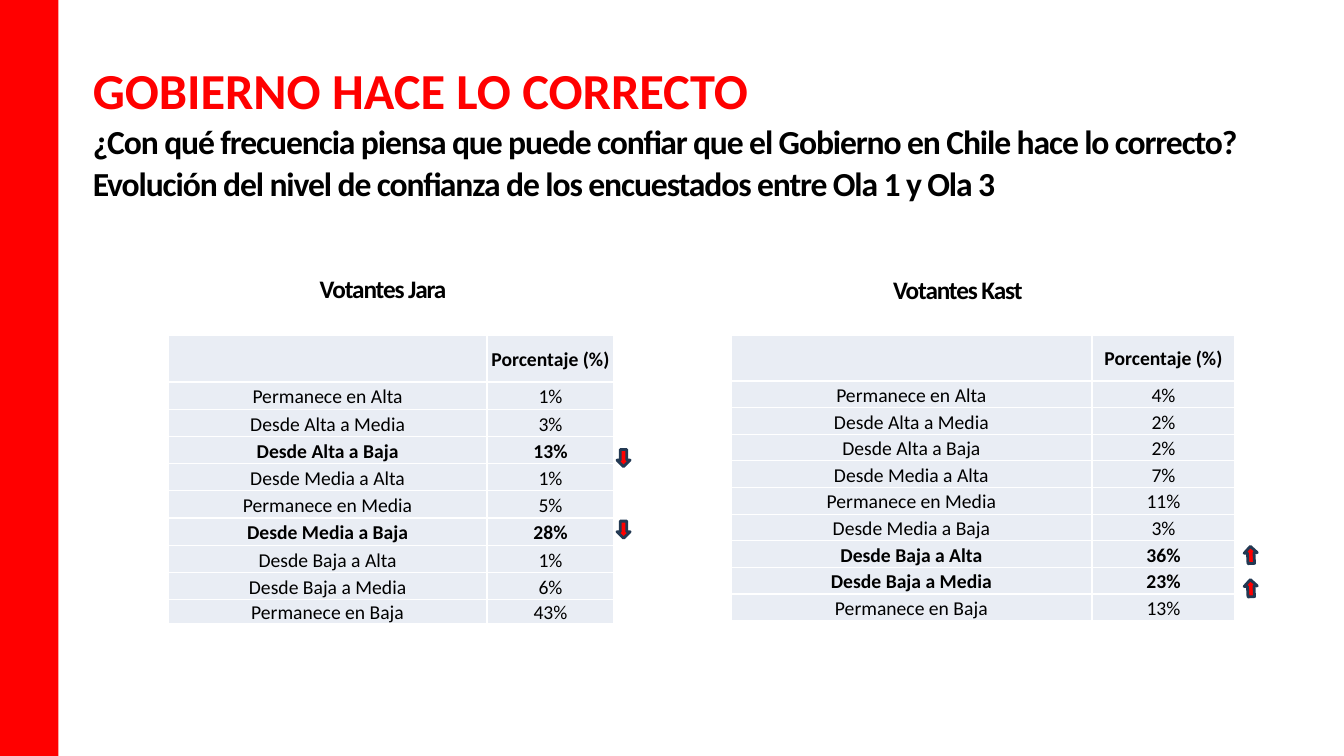
import pptx
import pptx.util
import pptx.dml.color
import pptx.enum.shapes
import pptx.enum.text
import pptx.oxml

Inches = pptx.util.Inches
Pt = pptx.util.Pt
Anchor = pptx.enum.text.MSO_ANCHOR
Align = pptx.enum.text.PP_ALIGN
Shape = pptx.enum.shapes.MSO_SHAPE

COLORS = {"red": "FF0000", "black": "000000", "white": "FFFFFF",
          "cell": "E9EDF4", "arrow_line": "233953"}
FONT = "Calibri"
TITLE = "GOBIERNO HACE LO CORRECTO"
SUBTITLES = [
    "¿Con qué frecuencia piensa que puede confiar que el Gobierno en Chile hace lo correcto?",
    "Evolución del nivel de confianza de los encuestados entre Ola 1 y Ola 3",
]
VALUE_HEADER = "Porcentaje (%)"
CHANGES = [
    "Permanece en Alta", "Desde Alta a Media", "Desde Alta a Baja",
    "Desde Media a Alta", "Permanece en Media", "Desde Media a Baja",
    "Desde Baja a Alta", "Desde Baja a Media", "Permanece en Baja",
]
# Lengths in inches; arrows are (left, tops, rotation)
GROUPS = [
    {"name": "Votantes Jara", "label_at": (2.3, 2.66),
     "values": [1, 3, 13, 1, 5, 28, 1, 6, 43],
     "highlights": ["Desde Alta a Baja", "Desde Media a Baja"],
     "left": 1.67, "columns": [3.16, 1.26],
     "rows": [0.46] + [0.27] * 8 + [0.24],
     "arrows": (6.12, [4.46, 5.17], 0)},
    {"name": "Votantes Kast", "label_at": (8, 2.67),
     "values": [4, 2, 2, 7, 11, 3, 36, 23, 13],
     "highlights": ["Desde Baja a Alta", "Desde Baja a Media"],
     "left": 7.25, "columns": [3.58, 1.42],
     "rows": [0.45] + [2.38 / 9] * 9,
     "arrows": (12.34, [5.42, 5.75], 177.1)},
]
TABLE_TOP = 3.33


def rgb(name):
    return pptx.dml.color.RGBColor.from_string(COLORS[name])


def write(para, text, size=14, bold=True, color="black", align=Align.CENTER, tracking=None):
    para.alignment = align
    span = para.add_run()
    span.text = text
    span.font.name = FONT
    span.font.size = Pt(size)
    span.font.bold = bold
    span.font.color.rgb = rgb(color)
    if tracking is not None:
        span.font._element.set("spc", str(round(tracking * 100)))


def add_block(page, kind, at, fill, line=None):
    block = page.shapes.add_shape(kind, *map(Inches, at))
    block.shadow.inherit = False
    block.fill.solid()
    block.fill.fore_color.rgb = rgb(fill)
    if line:
        block.line.color.rgb = rgb(line)
        block.line.width = Pt(2)
    else:
        block.line.fill.background()
    return block


def add_title(page):
    box = page.shapes.title
    box.left, box.top, box.width, box.height = map(Inches, (0.92, 0.58, 12.42, 1.46))
    frame = box.text_frame
    frame.word_wrap = True
    frame.auto_size = pptx.enum.text.MSO_AUTO_SIZE.SHAPE_TO_FIT_TEXT
    frame.vertical_anchor = Anchor.TOP
    frame.margin_left = frame.margin_right = frame.margin_bottom = 0
    frame.margin_top = Inches(0.01)
    write(frame.paragraphs[0], TITLE, size=36, color="red", align=Align.LEFT)
    for subtitle in SUBTITLES:
        para = frame.add_paragraph()
        para.space_before = Pt(1)
        write(para, subtitle, size=24, align=Align.LEFT, tracking=-0.8)


def format_cell(cell, anchor):
    cell.vertical_anchor = anchor
    cell.margin_left = cell.margin_right = cell.margin_top = Inches(0.01)
    cell.margin_bottom = 0
    properties = cell._tc.get_or_add_tcPr()
    for side in ("lnL", "lnR", "lnT", "lnB"):
        properties.append(pptx.oxml.parse_xml(
            f'<a:{side} xmlns:a="http://schemas.openxmlformats.org/drawingml/2006/main" '
            f'w="{Pt(1)}"><a:solidFill><a:srgbClr val="{COLORS["white"]}"/>'
            f'</a:solidFill></a:{side}>'))
    cell.fill.solid()
    cell.fill.fore_color.rgb = rgb("cell")


def add_group_table(page, group):
    lines = [("", VALUE_HEADER)]
    lines += [(change, f"{value}%") for change, value in zip(CHANGES, group["values"])]
    widths, heights = group["columns"], group["rows"]
    table = page.shapes.add_table(
        len(lines), len(widths), Inches(group["left"]), Inches(TABLE_TOP),
        Inches(sum(widths)), Inches(sum(heights))).table
    table.first_row = table.horz_banding = False
    for column, width in zip(table.columns, widths):
        column.width = Inches(width)
    for index, (row, height, line) in enumerate(zip(table.rows, heights, lines)):
        row.height = Inches(height)
        bold = index == 0 or line[0] in group["highlights"]
        for cell, text in zip(row.cells, line):
            format_cell(cell, Anchor.BOTTOM if index else Anchor.MIDDLE)
            if text:
                write(cell.text_frame.paragraphs[0], text, bold=bold)


def add_group_label(page, group):
    left, top = group["label_at"]
    box = page.shapes.add_textbox(Inches(left), Inches(top), Inches(3), Inches(0.4))
    box.text_frame.word_wrap = True
    write(box.text_frame.paragraphs[0], group["name"], size=18, tracking=-0.8)


def add_group_arrows(page, group):
    left, tops, rotation = group["arrows"]
    for top in tops:
        arrow = add_block(page, Shape.DOWN_ARROW, (left, top, 0.13, 0.17), "red", "arrow_line")
        arrow.rotation = rotation


def main():
    deck = pptx.Presentation()
    deck.slide_width, deck.slide_height = Inches(13.33), Inches(7.5)
    page = deck.slides.add_slide(deck.slide_layouts[5])
    add_block(page, Shape.RECTANGLE, (0, 0, 0.58, 7.5), "red")
    add_title(page)
    for add_part in (add_group_table, add_group_label, add_group_arrows):
        for group in GROUPS:
            add_part(page, group)
    deck.save("out.pptx")


if __name__ == "__main__":
    main()
